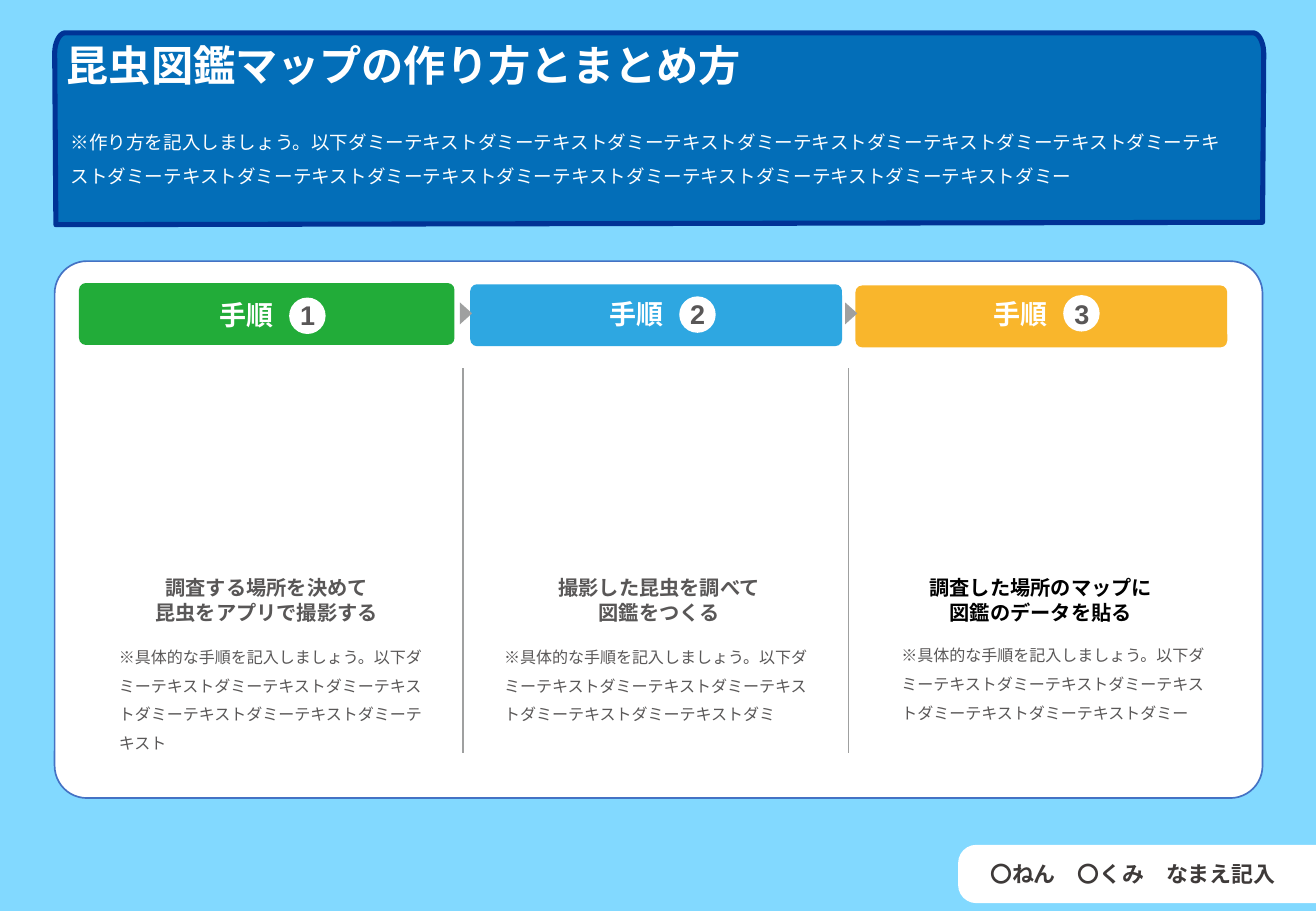
from dataclasses import dataclass
from typing import Any, NamedTuple

from lxml.etree import SubElement
from pptx import Presentation
from pptx.dml.color import RGBColor
from pptx.enum.lang import MSO_LANGUAGE_ID
from pptx.enum.shapes import MSO_CONNECTOR, MSO_SHAPE
from pptx.enum.text import MSO_ANCHOR, MSO_AUTO_SIZE, PP_ALIGN
from pptx.oxml.ns import qn
from pptx.util import Emu, Inches, Pt

COLUMNS, ROWS = 108.3, 75
CELL = Inches(0.1)

COLORS = {
    "sky": "82D9FF", "banner": "036EB8", "banner_edge": "003396",
    "white": "FFFFFF", "panel_edge": "4472C4", "green": "22AC39",
    "blue": "2EA7E1", "orange": "F9B62C", "gray": "9FA0A0",
    "text": "595757", "name": "3E3A39", "black": "000000",
}


class Area(NamedTuple):
    column: float
    row: float
    columns: float
    rows: float


class Words(NamedTuple):
    text: str
    color: str


@dataclass(frozen=True)
class Style:
    size: float
    bold: bool = False
    align: PP_ALIGN = PP_ALIGN.LEFT
    spacing: float = 1.0


@dataclass(frozen=True)
class Step:
    number: str
    bar: Area
    bar_color: str
    label: tuple[float, float]
    badge_row: float
    heading_column: float
    heading: tuple[str, str]
    heading_color: str
    detail: Area
    detail_text: str


TITLE = Style(25, bold=True)
LEAD = Style(11, spacing=1.5)
NAME = Style(13, bold=True)
LABEL = Style(16, bold=True, align=PP_ALIGN.CENTER)
HEADING = Style(12, bold=True, align=PP_ALIGN.CENTER)
DETAIL = Style(9.5, spacing=1.5)

FIXED = {"word_wrap": True, "auto_size": MSO_AUTO_SIZE.NONE, "vertical_anchor": MSO_ANCHOR.TOP}
MIDDLE = FIXED | {"vertical_anchor": MSO_ANCHOR.MIDDLE}
GROWING = FIXED | {"auto_size": MSO_AUTO_SIZE.SHAPE_TO_FIT_TEXT}

DUMMY = "ダミーテキスト"
DETAIL_START = "※具体的な手順を記入しましょう。以下"
STEPS = [
    Step("1", Area(6.5, 23.3, 30.9, 5.1), "green", (13.7, 24.1), 24.5,
         10, ("調査する場所を決めて", "昆虫をアプリで撮影する"), "text",
         Area(8.8, 52, 27.3, 10.4), DETAIL_START + DUMMY * 6),
    Step("2", Area(38.7, 23.4, 30.6, 5.1), "blue", (45.8, 24), 24.4,
         42.3, ("撮影した昆虫を調べて", "図鑑をつくる"), "text",
         Area(40.5, 52, 27.3, 8), DETAIL_START + DUMMY * 5 + "ダミ"),
    Step("3", Area(70.4, 23.5, 30.6, 5.1), "orange", (77.4, 24), 24.3,
         73.7, ("調査した場所のマップに", "図鑑のデータを貼る"), "black",
         Area(73.2, 51.9, 27.3, 8), DETAIL_START + DUMMY * 5 + "ダミー"),
]
DIVIDERS = [38.1, 69.8]


def cells(count: float) -> Emu:
    return Emu(round(count * CELL))


def rgb(color: str) -> RGBColor:
    return RGBColor.from_string(COLORS[color])


def apply(target: Any, formats: dict[str, Any]) -> None:
    for name, value in formats.items():
        setattr(target, name, value)


def paint(shape: Any, fill: str, edge: str | None = None, width: float = 1) -> None:
    shape.shadow.inherit = False
    shape.fill.solid()
    shape.fill.fore_color.rgb = rgb(fill)
    if edge:
        shape.line.color.rgb = rgb(edge)
        shape.line.width = Pt(width)
    else:
        shape.line.fill.background()


def draw_shape(slide: Any, preset: MSO_SHAPE, area: Area, fill: str, edge: str | None = None,
               adjustments: tuple[float, ...] = (), rotation: float = 0) -> None:
    shape = slide.shapes.add_shape(preset, *map(cells, area))
    for index, value in enumerate(adjustments):
        shape.adjustments[index] = value
    shape.rotation = rotation
    paint(shape, fill, edge)


def write(holder: Any, paragraphs: list[list[Words]], style: Style, frame: dict[str, Any]) -> None:
    apply(holder.text_frame, frame)
    for index, pieces in enumerate(paragraphs):
        paragraph = holder.text_frame.paragraphs[0] if index == 0 else holder.text_frame.add_paragraph()
        if holder.is_placeholder:
            properties = paragraph.element.get_or_add_pPr() if hasattr(paragraph, "element") else paragraph._p.get_or_add_pPr()
            apply_plain = {"marL": "0", "indent": "0"}
            for name, value in apply_plain.items():
                properties.set(name, value)
            SubElement(properties, qn("a:buNone"))
        apply(paragraph, {"alignment": style.align, "line_spacing": style.spacing,
                          "space_before": Pt(0)})
        for words in pieces:
            run = paragraph.add_run()
            run.text = words.text
            apply(run.font, {"name": "Arial", "size": Pt(style.size), "bold": style.bold,
                             "language_id": MSO_LANGUAGE_ID.JAPANESE})
            run.font.color.rgb = rgb(words.color)


def draw_text(slide: Any, area: Area, paragraphs: list[list[Words]], style: Style,
              frame: dict[str, Any] = GROWING) -> None:
    write(slide.shapes.add_textbox(*map(cells, area)), paragraphs, style, frame)


def fill_placeholder(holder: Any, area: Area, text: str, style: Style) -> None:
    apply(holder, dict(zip(("left", "top", "width", "height"), map(cells, area))))
    write(holder, [[Words(text, "white")]], style, FIXED)


def corner(*controls: tuple[float, float], pieces: int = 12) -> list[tuple[float, float]]:
    weights = [((1 - t) ** 3, 3 * t * (1 - t) ** 2, 3 * t * t * (1 - t), t ** 3)
               for t in (piece / pieces for piece in range(pieces + 1))]
    return [tuple(sum(w * point[axis] for w, point in zip(weight, controls)) for axis in (0, 1))
            for weight in weights]


def draw_banner(slide: Any) -> None:
    outline = [
        *corner((4.5, 4.4), (4.5, 3.5), (4.9, 2.7), (5.4, 2.7)),
        *corner((103.1, 2.7), (103.6, 2.7), (104, 3.5), (104, 4.4)),
        (103.9, 18.3), (4.6, 18.5),
    ]
    points = [(cells(column), cells(row)) for column, row in outline]
    builder = slide.shapes.build_freeform(*points[0])
    builder.add_line_segments(points[1:], close=True)
    banner = builder.convert_to_shape()
    paint(banner, "banner", "banner_edge", 3)
    slide.shapes.title.element.addprevious(banner.element)


def draw_divider(slide: Any, column: float) -> None:
    divider = slide.shapes.add_connector(
        MSO_CONNECTOR.STRAIGHT, cells(column), cells(30.3), cells(column), cells(62))
    divider.line.color.rgb = rgb("gray")
    divider.line.width = Pt(0.75)
    SubElement(divider.element.spPr, qn("a:effectLst"))


def draw_step(slide: Any, step: Step) -> None:
    column, row = step.label
    draw_shape(slide, MSO_SHAPE.ROUNDED_RECTANGLE, step.bar, step.bar_color, adjustments=(0.11,))
    draw_shape(slide, MSO_SHAPE.OVAL, Area(column + 10.1, step.badge_row, 3, 3), "white")
    draw_text(slide, Area(column, row, 16.6, 3.7),
              [[Words("手順　", "white"), Words(step.number, "text")]], LABEL)
    draw_text(slide, Area(step.heading_column, 46.9, 23.9, 5),
              [[Words(line, step.heading_color)] for line in step.heading], HEADING)
    draw_text(slide, step.detail, [[Words(step.detail_text, "text")]], DETAIL)


def main() -> None:
    deck = Presentation()
    apply(deck, {"slide_width": cells(COLUMNS), "slide_height": cells(ROWS)})
    slide = deck.slides.add_slide(deck.slide_layouts[1])
    slide.background.fill.solid()
    slide.background.fill.fore_color.rgb = rgb("sky")

    draw_banner(slide)
    fill_placeholder(slide.shapes.title, Area(4.5, 2.7, 99.4, 6),
                     "昆虫図鑑マップの作り方とまとめ方", TITLE)
    fill_placeholder(slide.placeholders[1], Area(4.8, 9.4, 97.5, 6.3),
                     "※作り方を記入しましょう。以下" + DUMMY * 14 + "ダミー", LEAD)

    draw_shape(slide, MSO_SHAPE.ROUND_2_SAME_RECTANGLE, Area(91.2, 57.2, 4.8, 29.5), "white",
               adjustments=(0.31, 0), rotation=270)
    draw_text(slide, Area(80.5, 70.5, 27.9, 2.9),
              [[Words("〇ねん　〇くみ　なまえ記入", "name")]], NAME, MIDDLE)

    draw_shape(slide, MSO_SHAPE.ROUNDED_RECTANGLE, Area(4.5, 21.5, 99.4, 44.2), "white",
               edge="panel_edge", adjustments=(0.06,))
    for step in STEPS:
        draw_step(slide, step)
    for column in DIVIDERS:
        draw_shape(slide, MSO_SHAPE.ISOSCELES_TRIANGLE, Area(column - 0.65, 25.3, 1.8, 1), "gray",
                   rotation=90)
        draw_divider(slide, column)

    deck.save("out.pptx")


if __name__ == "__main__":
    main()
